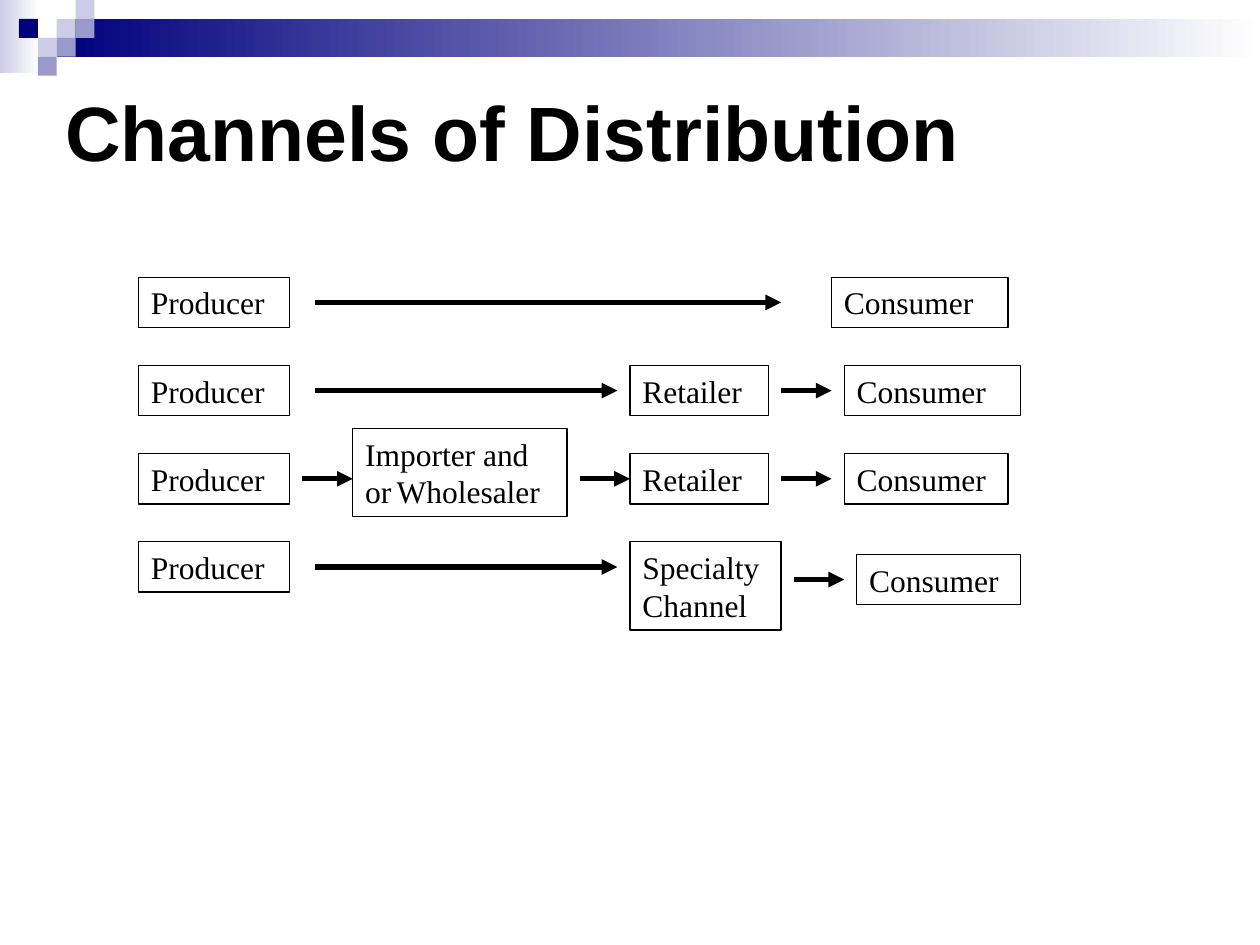
import dataclasses

import pptx
import pptx.dml.color
import pptx.enum.dml
import pptx.enum.shapes
import pptx.enum.text
import pptx.oxml
import pptx.oxml.ns
import pptx.util
from pptx.util import Cm

STEP = 0.254  # grid step in cm
BLACK, WHITE = "000000", "FFFFFF"
NAVY, LILAC, MID = "00007D", "CCCCE6", "9999CC"


@dataclasses.dataclass
class Run:
    text: str
    size: float = 18
    font: str = "Times New Roman"
    bold: bool = False


@dataclasses.dataclass
class Box:
    runs: list[Run]
    left: float
    top: float
    width: float
    height: float = 4


@dataclasses.dataclass
class Arrow:
    start: float
    end: float
    y: float


def grid(steps: float) -> pptx.util.Length:
    """Turn grid steps into a length."""
    return Cm(steps * STEP)


def color(code: str) -> pptx.dml.color.RGBColor:
    return pptx.dml.color.RGBColor.from_string(code)


def add_rect(slide, left: float, top: float, width: float, height: float,
             fill: str, fade: bool = False):
    """Add a plain rectangle; with fade, it runs to white on the right."""
    rect = slide.shapes.add_shape(
        pptx.enum.shapes.MSO_SHAPE.RECTANGLE,
        grid(left), grid(top), grid(width), grid(height))
    rect.shadow.inherit = False
    rect.line.fill.background()
    if fade:
        rect.fill.gradient()
        rect.fill.gradient_angle = 0
        for stop, code, place in zip(rect.fill.gradient_stops, (fill, WHITE), (0, 1)):
            stop.color.rgb = color(code)
            stop.position = place
    else:
        rect.fill.solid()
        rect.fill.fore_color.rgb = color(fill)
    return rect


def add_runs(frame, runs: list[Run], anchor) -> None:
    frame.word_wrap = True
    frame.vertical_anchor = anchor
    para = frame.paragraphs[0]
    para.alignment = pptx.enum.text.PP_ALIGN.LEFT
    for item in runs:
        run = para.add_run()
        run.text = item.text
        run.font.name = item.font
        run.font.size = pptx.util.Pt(item.size)
        run.font.bold = item.bold
        run.font.color.rgb = color(BLACK)


def add_box(slide, box: Box) -> None:
    rect = add_rect(slide, box.left, box.top, box.width, box.height, WHITE)
    rect.line.color.rgb = color(BLACK)
    rect.line.width = pptx.util.Pt(0.75)
    add_runs(rect.text_frame, box.runs, pptx.enum.text.MSO_ANCHOR.TOP)


def add_arrow(slide, arrow: Arrow) -> None:
    line = slide.shapes.add_connector(
        pptx.enum.shapes.MSO_CONNECTOR.STRAIGHT,
        grid(arrow.start), grid(arrow.y), grid(arrow.end), grid(arrow.y))
    line.line.color.rgb = color(BLACK)
    line.line.width = pptx.util.Pt(3)
    space = pptx.oxml.ns.nsdecls("a")
    line.line._get_or_add_ln().append(
        pptx.oxml.parse_xml(f'<a:tailEnd {space} type="triangle"/>'))
    line._element.spPr.append(pptx.oxml.parse_xml(f"<a:effectLst {space}/>"))


def add_banner(slide) -> None:
    """Draw the fading bars and the checker tiles at the top."""
    add_rect(slide, 0, 0, 3.1, 5.8, LILAC, fade=True)
    add_rect(slide, 4.5, 1.5, 95.5, 3, NAVY, fade=True)
    side = 1.5
    tiles = [(3, 1, LILAC), (4, 0, LILAC), (4, 1, MID), (2, 2, LILAC),
             (1, 1, NAVY), (3, 2, MID), (2, 3, MID)]
    for col, row, fill in tiles:
        add_rect(slide, col * side, row * side, side, side, fill)


def add_title(slide, text: str) -> None:
    box = slide.shapes.add_textbox(grid(4.2), grid(5.8), grid(90), grid(9.2))
    add_runs(box.text_frame, [Run(text, 44, "Arial", True)],
             pptx.enum.text.MSO_ANCHOR.MIDDLE)


def main() -> None:
    deck = pptx.Presentation()
    deck.slide_width, deck.slide_height = grid(100), grid(75)
    slide = deck.slides.add_slide(deck.slide_layouts[6])
    add_banner(slide)
    add_title(slide, "Channels of Distribution")

    tops = [22, 29, 36, 43]
    maker, shop, buyer = [Run("Producer")], [Run("Retailer")], [Run("Consumer")]
    trader = [Run("Importer and or"), Run(" ", 12), Run("Wholesaler")]
    boxes = [Box(maker, 11, top, 12) for top in tops]
    boxes += [Box(shop, 50, top, 11) for top in tops[1:3]]
    boxes += [
        Box(trader, 28, 34, 17, 7),
        Box([Run("Specialty Channel")], 50, 43, 12, 7),
        Box(buyer, 66, 22, 14),
        Box(buyer, 67, 29, 14),
        Box(buyer, 67, 36, 13),
        Box(buyer, 68, 44, 13),
    ]
    arrows = [
        Arrow(25, 62, 24),
        Arrow(25, 49, 31), Arrow(62, 66, 31),
        Arrow(24, 28, 38), Arrow(46, 50, 38), Arrow(62, 66, 38),
        Arrow(25, 49, 45), Arrow(63, 67, 46),
    ]
    for box in boxes:
        add_box(slide, box)
    for arrow in arrows:
        add_arrow(slide, arrow)
    deck.save("out.pptx")


if __name__ == "__main__":
    main()
